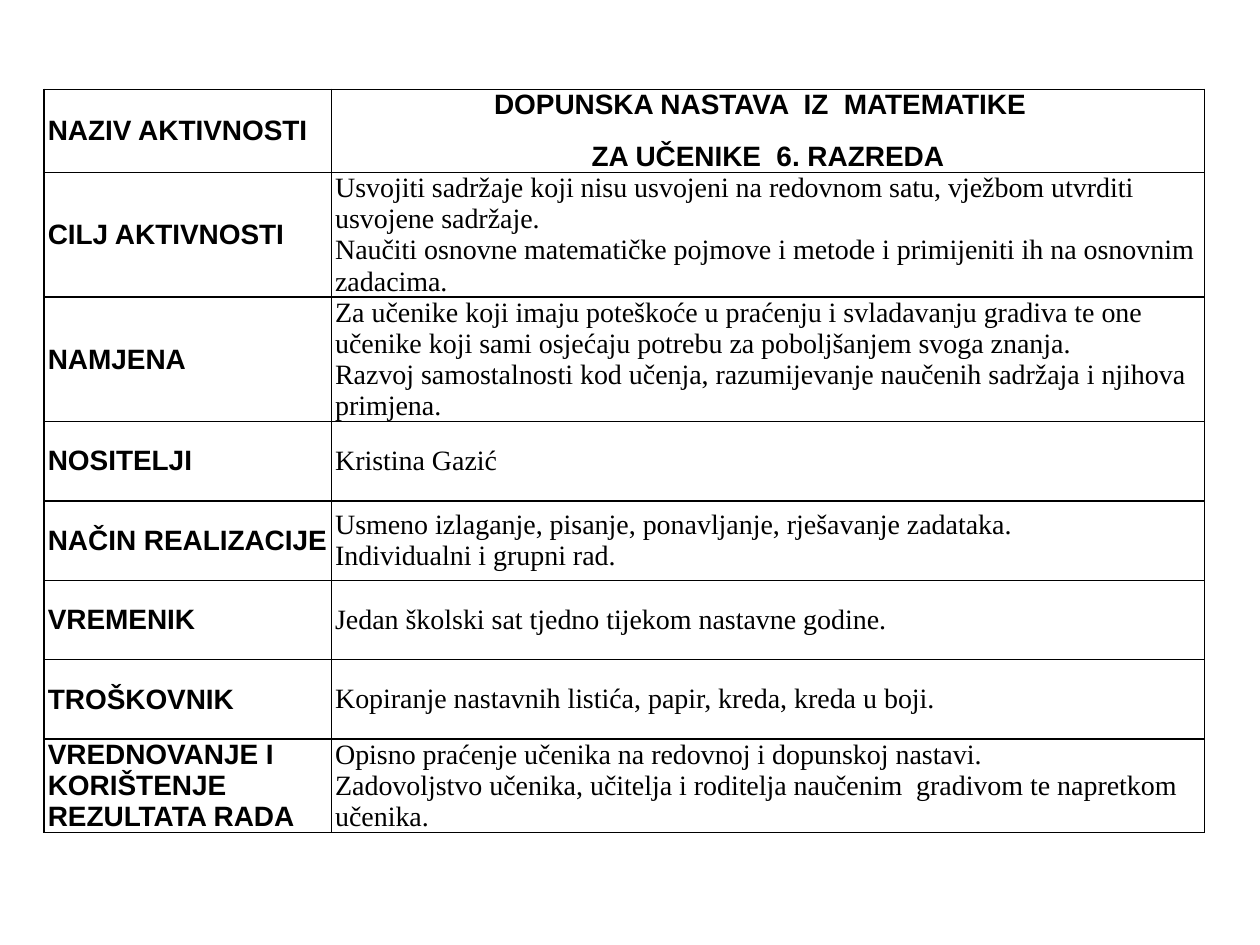
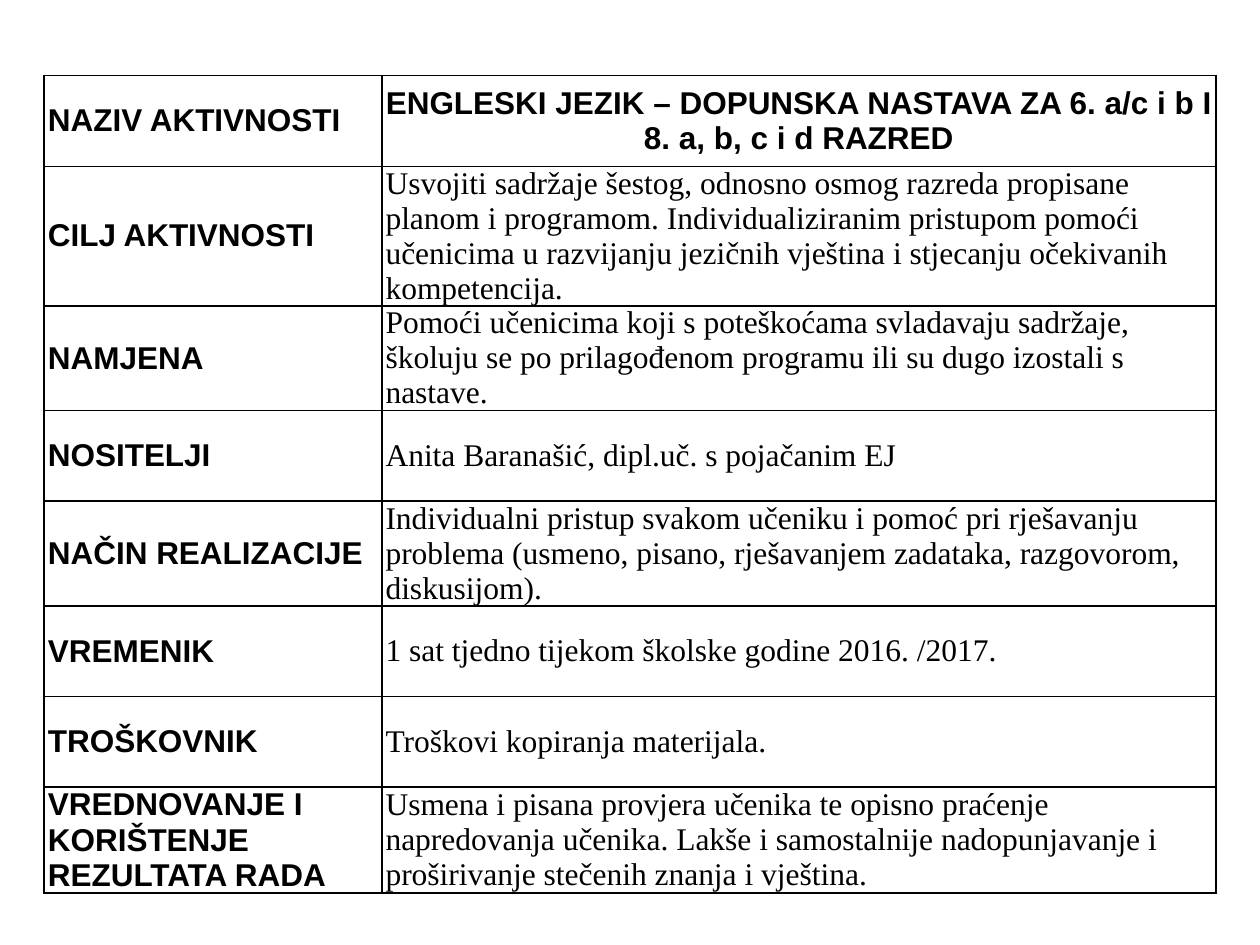
from dataclasses import dataclass

from lxml.etree import SubElement
from pptx import Presentation
from pptx.dml.color import RGBColor as Rgb
from pptx.enum.text import MSO_ANCHOR as Anchor, PP_ALIGN as Align
from pptx.oxml.ns import qn
from pptx.util import Inches, Pt

# Shared look
INK = "000000"
HEAD = "Arial"
BODY = "Times New Roman"
LEFT = 0.35
PAD = 0.03
RULE = 1
LABELS = [
    "NAZIV AKTIVNOSTI",
    "CILJ AKTIVNOSTI",
    "NAMJENA",
    "NOSITELJI",
    "NAČIN REALIZACIJE",
    "VREMENIK",
    "TROŠKOVNIK",
    "VREDNOVANJE I KORIŠTENJE REZULTATA RADA",
]


@dataclass
class Plan:
    top: float
    cols: list[float]
    rows: list[float]
    size: int
    title: list[str]
    texts: list[list[str]]


PLANS = [
    Plan(
        top=0.71,
        cols=[2.28, 6.93],
        rows=[0.63, 0.93, 0.93] + [0.63] * 4 + [0.7],
        size=16,
        title=["DOPUNSKA NASTAVA  IZ  MATEMATIKE  ", "ZA UČENIKE  6. RAZREDA"],
        texts=[
            ["Usvojiti sadržaje koji nisu usvojeni na redovnom satu, "
             "vježbom utvrditi usvojene sadržaje.",
             "Naučiti osnovne matematičke pojmove i metode i primijeniti "
             "ih na osnovnim zadacima."],
            ["Za učenike koji imaju poteškoće u praćenju i svladavanju gradiva "
             "te one učenike koji sami osjećaju potrebu za poboljšanjem "
             "svoga znanja.",
             "Razvoj samostalnosti kod učenja, razumijevanje naučenih "
             "sadržaja i njihova primjena."],
            ["Kristina Gazić"],
            ["Usmeno izlaganje, pisanje, ponavljanje, rješavanje zadataka.",
             "Individualni i grupni rad."],
            ["Jedan školski sat tjedno tijekom nastavne godine."],
            ["Kopiranje nastavnih listića, papir, kreda, kreda u boji."],
            ["Opisno praćenje učenika na redovnoj i dopunskoj nastavi.",
             "Zadovoljstvo učenika, učitelja i roditelja naučenim  gradivom "
             "te napretkom učenika."],
        ],
    ),
    Plan(
        top=0.6,
        cols=[2.68, 6.62],
        rows=[0.72] * 8,
        size=18,
        title=["ENGLESKI JEZIK – DOPUNSKA NASTAVA ZA 6. a/c i b "
               "I 8. a, b, c i d RAZRED"],
        texts=[
            ["Usvojiti sadržaje šestog, odnosno osmog razreda propisane planom "
             "i programom. Individualiziranim pristupom pomoći učenicima u "
             "razvijanju jezičnih vještina i stjecanju očekivanih kompetencija."],
            ["Pomoći učenicima koji s poteškoćama svladavaju sadržaje, školuju "
             "se po prilagođenom programu ili su dugo izostali s nastave."],
            ["Anita Baranašić, dipl.uč. s pojačanim EJ"],
            ["Individualni pristup svakom učeniku i pomoć pri rješavanju problema "
             "(usmeno, pisano, rješavanjem zadataka, razgovorom, diskusijom)."],
            ["1 sat tjedno tijekom školske godine 2016. /2017."],
            ["Troškovi kopiranja materijala."],
            ["Usmena i pisana provjera učenika te opisno praćenje napredovanja "
             "učenika. Lakše i samostalnije nadopunjavanje i proširivanje "
             "stečenih znanja i vještina."],
        ],
    ),
]


def color(code: str) -> Rgb:
    return Rgb.from_string(code)


def frame(cell) -> None:
    """Clear the fill, set the margins and rule all four sides."""
    cell.fill.background()
    cell.vertical_anchor = Anchor.MIDDLE
    cell.margin_left = cell.margin_right = Inches(PAD)
    cell.margin_top = cell.margin_bottom = 0
    props = cell._tc.get_or_add_tcPr()
    for spot, side in enumerate("LRTB"):
        line = SubElement(props, qn(f"a:ln{side}"), w=str(Pt(RULE)))
        fill = SubElement(line, qn("a:solidFill"))
        SubElement(fill, qn("a:srgbClr"), val=INK)
        props.insert(spot, line)  # borders come before the fill


def write(cell, lines: list[str], size: int, face: str, bold: bool,
          align: Align = Align.LEFT, gap: int = 0) -> None:
    frame(cell)
    text = cell.text_frame
    for num, line in enumerate(lines):
        para = text.add_paragraph() if num else text.paragraphs[0]
        para.alignment = align
        para.space_before = Pt(gap if num else 0)
        run = para.add_run()
        run.text = line
        font = run.font
        font.size, font.name, font.bold = Pt(size), face, bold
        font.color.rgb = color(INK)


def draw(slide, plan: Plan) -> None:
    grid = slide.shapes.add_table(
        len(plan.rows), len(plan.cols), Inches(LEFT), Inches(plan.top),
        Inches(sum(plan.cols)), Inches(sum(plan.rows))).table
    grid.first_row = grid.horz_banding = False
    for col, width in zip(grid.columns, plan.cols):
        col.width = Inches(width)
    for row, height in zip(grid.rows, plan.rows):
        row.height = Inches(height)

    # Labels on the left, title and texts on the right
    for num, label in enumerate(LABELS):
        write(grid.cell(num, 0), [label], plan.size, HEAD, True)
    write(grid.cell(0, 1), plan.title, plan.size, HEAD, True, Align.CENTER, 12)
    for num, lines in enumerate(plan.texts, 1):
        write(grid.cell(num, 1), lines, plan.size, BODY, False)


def main() -> None:
    deck = Presentation()
    deck.slide_width, deck.slide_height = Inches(10), Inches(7.5)
    blank = deck.slide_layouts[6]
    for plan in PLANS:
        draw(deck.slides.add_slide(blank), plan)
    deck.save("out.pptx")


if __name__ == "__main__":
    main()
